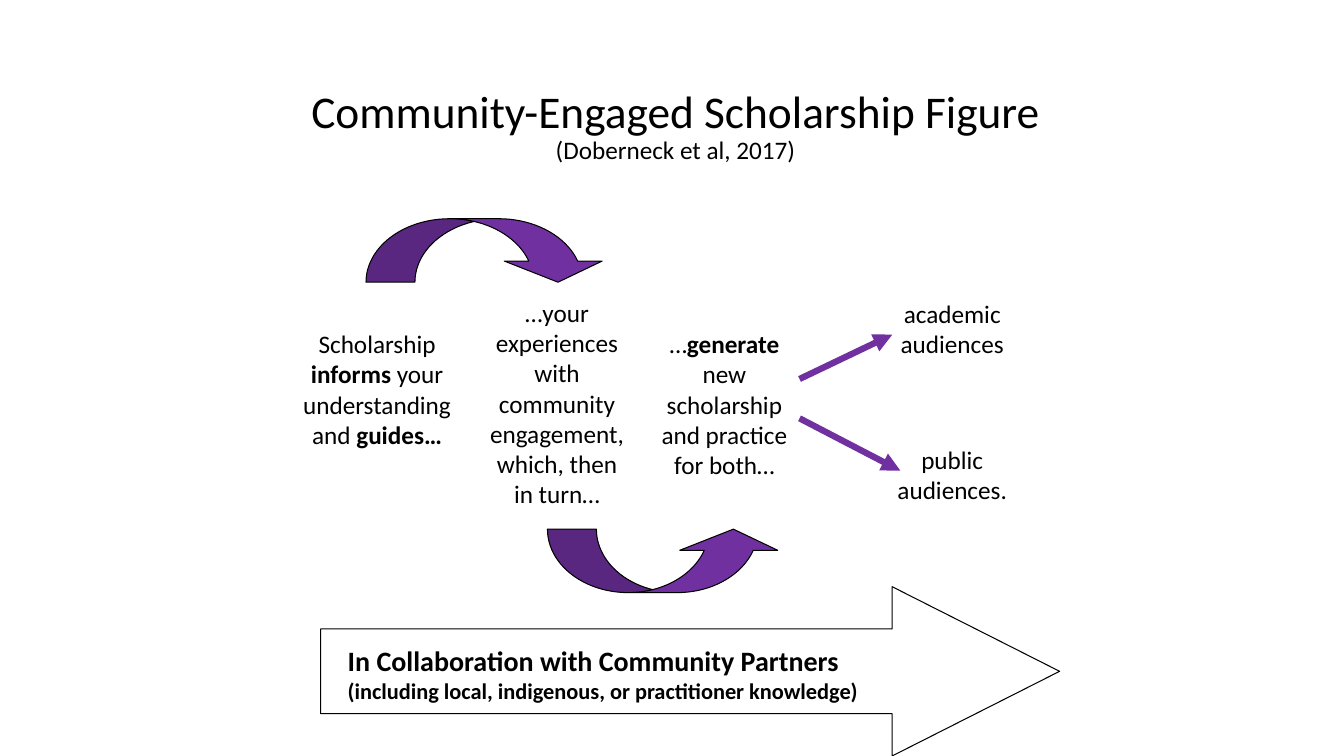
from lxml.etree import SubElement
from pptx import Presentation
from pptx.dml.color import RGBColor
from pptx.enum.shapes import MSO_CONNECTOR, MSO_SHAPE
from pptx.enum.text import MSO_ANCHOR, PP_ALIGN
from pptx.oxml.ns import qn
from pptx.util import Inches, Pt

PURPLE, BLACK, WHITE = "7030A0", "000000", "FFFFFF"


def rgb(value):
    """Turn a hex string into a colour."""
    return RGBColor.from_string(value)


def add_runs(p, runs):
    """Write (text, format) pairs into a paragraph."""
    for text, fmt in runs:
        r = p.add_run()
        r.text = text
        r.font.color.rgb = rgb(BLACK)
        for name, value in {"name": "Calibri", "size": Pt(18), **fmt}.items():
            setattr(r.font, name, value)


def add_block(s, kind, box, fill, outline=None, adj=()):
    """Place a flat preset shape in a box."""
    sp = s.shapes.add_shape(kind, *map(Inches, box))
    sp.shadow.inherit = False
    sp.fill.solid()
    sp.fill.fore_color.rgb = rgb(fill)
    if outline:
        sp.line.color.rgb = rgb(outline)
        sp.line.width = Pt(0.75)
    else:
        sp.line.fill.background()
    for i, value in enumerate(adj):
        sp.adjustments[i] = value
    return sp


def add_label(s, box, runs, align=PP_ALIGN.CENTER):
    """Place a white text block in a box."""
    tf = add_block(s, MSO_SHAPE.RECTANGLE, box, WHITE).text_frame
    tf.word_wrap = True
    tf.vertical_anchor = MSO_ANCHOR.TOP
    p = tf.paragraphs[0]
    p.alignment = align
    p.space_after = Pt(10)
    add_runs(p, runs)


def add_curve(s, box, flipped=False):
    """Place a curved arrow, mirrored top to bottom on request."""
    sp = add_block(s, MSO_SHAPE.CURVED_DOWN_ARROW, box, PURPLE, BLACK,
                   (0.771, 1.542, 0.333))
    if flipped:
        sp.element.spPr.get_or_add_xfrm().set("flipV", "1")


def add_arrow(s, x1, y1, x2, y2):
    """Draw a thick straight arrow."""
    cx = s.shapes.add_connector(MSO_CONNECTOR.STRAIGHT,
                                *map(Inches, (x1, y1, x2, y2)))
    cx.line.color.rgb = rgb(PURPLE)
    cx.line.width = Pt(4.5)
    SubElement(cx.line._get_or_add_ln(), qn("a:tailEnd"), type="triangle")
    SubElement(cx.element.spPr, qn("a:effectLst"))


def add_title(s, box):
    """Format the title placeholder with its citation line."""
    sp = s.shapes.title
    for name, value in zip(("left", "top", "width", "height"), box):
        setattr(sp, name, Inches(value))
    tf = sp.text_frame
    tf.word_wrap = True
    tf.vertical_anchor = MSO_ANCHOR.BOTTOM
    p = tf.paragraphs[0]
    p.alignment = PP_ALIGN.CENTER
    p.line_spacing = 0.9
    add_runs(p, [("Community-Engaged Scholarship Figure", {"size": Pt(32.4)})])
    p.add_line_break()
    add_runs(p, [("(Doberneck et al, 2017)", {})])


def add_partners(s, x, y, w, h):
    """Build the wide collaboration arrow and its caption."""
    add_block(s, MSO_SHAPE.RIGHT_ARROW, (x, y, w, h), WHITE, BLACK, (0.5, 0.989))
    add_label(s, (x + 0.17, y + 0.51, 5.75, 0.58), [
        ("In Collaboration with Community Partners ",
         {"size": Pt(20), "bold": True}),
        ("(including local, indigenous, or practitioner knowledge)",
         {"size": Pt(16), "bold": True}),
    ], PP_ALIGN.LEFT)


def add_cycle(s, x, y):
    """Build the three steps, the two audiences and their arrows."""
    bold = {"bold": True}
    labels = [
        (0, 1.04, 1.78, 1.31, [("Scholarship ", {}), ("informs", bold),
                               (" your understanding and ", {}),
                               ("guides…", bold)]),
        (1.91, 0.73, 1.53, 2.22, [("…your experiences with community "
                                   "engagement, which, then in turn…", {})]),
        (3.5, 1.04, 1.67, 1.62, [("…", {}), ("generate ", bold),
                                 ("new scholarship and practice for both…", {})]),
        (5.83, 2.19, 1.53, 0.71, [("public audiences.", {})]),
        (5.83, 0.74, 1.53, 0.71, [("academic audiences", {})]),
    ]
    for dx, dy, w, h, runs in labels:
        add_label(s, (x + dx, y + dy, w, h), runs)
    add_curve(s, (x + 0.78, y, 2.39, 0.63))
    add_curve(s, (x + 2.58, y + 3.08, 2.33, 0.63), flipped=True)
    add_arrow(s, x + 5.08, y + 1.98, x + 6.08, y + 2.5)
    add_arrow(s, x + 5.08, y + 1.59, x + 6, y + 1.15)


def main():
    """Build and save the slide."""
    prs = Presentation()
    prs.slide_width, prs.slide_height = Inches(13.33), Inches(7.5)
    s = prs.slides.add_slide(prs.slide_layouts[5])
    add_title(s, (1.7, 0.71, 10, 0.98))
    add_partners(s, 3.18, 5.82, 7.33, 1.68)
    add_cycle(s, 2.85, 2.17)
    prs.save("out.pptx")


if __name__ == "__main__":
    main()
